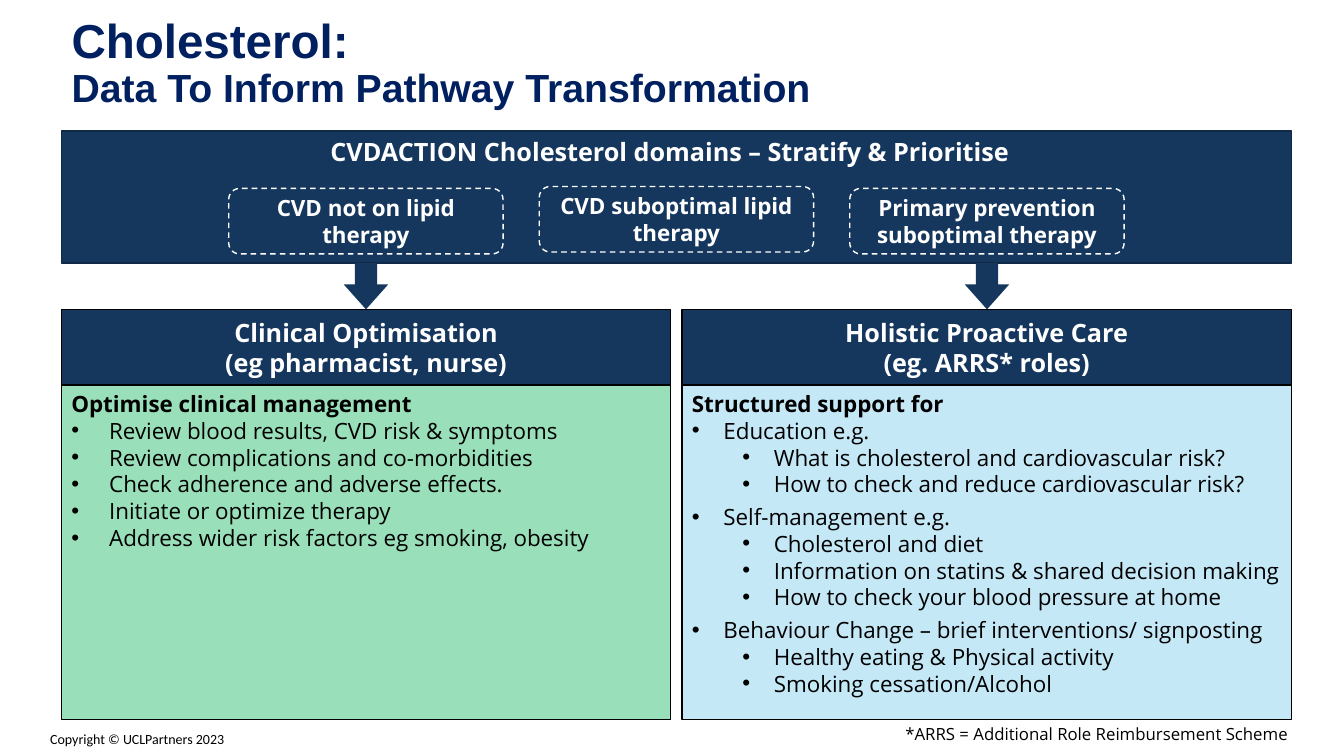
from dataclasses import dataclass

from lxml.etree import SubElement
from pptx import Presentation
from pptx.dml.color import RGBColor
from pptx.enum.dml import MSO_LINE
from pptx.enum.shapes import MSO_SHAPE
from pptx.enum.text import MSO_ANCHOR, PP_ALIGN
from pptx.oxml.ns import qn
from pptx.util import Pt

TITLE = ["Cholesterol:", "Data To Inform Pathway Transformation"]
BANNER = "CVDACTION Cholesterol domains – Stratify & Prioritise"
DOMAINS = [
    ("CVD not on lipid therapy", 134.6),
    ("CVD suboptimal lipid therapy", 133.2),
    ("Primary prevention suboptimal therapy", 134.6),
]
# Bullets are (level, text) pairs.
COLUMNS = [
    {
        "heading": ["Clinical Optimisation", "(eg pharmacist, nurse)"],
        "lead": "Optimise clinical management",
        "fill": "00B050", "opacity": 40, "hanging": 27, "arrow_left": 245.6,
        "bullets": [
            (0, "Review blood results, CVD risk & symptoms"),
            (0, "Review complications and co-morbidities"),
            (0, "Check adherence and adverse effects."),
            (0, "Initiate or optimize therapy"),
            (0, "Address wider risk factors eg smoking, obesity"),
        ],
    },
    {
        "heading": ["Holistic Proactive Care", "(eg. ARRS* roles)"],
        "lead": "Structured support for",
        "fill": "42B6E6", "opacity": 30, "hanging": 22.5, "arrow_left": 689.2,
        "bullets": [
            (0, "Education e.g."),
            (1, "What is cholesterol and cardiovascular risk?"),
            (1, "How to check and reduce cardiovascular risk?"),
            (0, "Self-management e.g."),
            (1, "Cholesterol and diet"),
            (1, "Information on statins & shared decision making"),
            (1, "How to check your blood pressure at home"),
            (0, "Behaviour Change – brief interventions/ signposting"),
            (1, "Healthy eating & Physical activity"),
            (1, "Smoking cessation/Alcohol"),
        ],
    },
]
FOOTNOTE = "*ARRS = Additional Role Reimbursement Scheme"
COPYRIGHT = "Copyright © UCLPartners 2023"


@dataclass(frozen=True)
class Theme:
    navy: str = "15375E"
    banner_line: str = "102946"
    title: str = "002060"
    white: str = "FFFFFF"
    black: str = "000000"
    title_font: str = "Arial"
    body_font: str = "Open Sans"
    copyright_font: str = "Calibri"
    title_sizes: tuple = (34, 28)
    heading_size: int = 18
    body_size: int = 16
    footnote_size: int = 12
    copyright_size: int = 10


THEME = Theme()
LEFT, WIDTH, GAP = 43.9, 878.6, 8
COLUMN_WIDTH = (WIDTH - GAP) / 2
BANNER_TOP, BANNER_HEIGHT = 93.6, 94.4
HEADING_TOP, HEADING_HEIGHT = 221, 54
BODY_HEIGHT = 239
DOMAIN_LEFT, DOMAIN_STEP, DOMAIN_WIDTH, DOMAIN_HEIGHT = 163.4, 221.8, 196, 46.8
ARROW_WIDTH = 31.7


def style(paragraph, size, color, bold=False, font=THEME.body_font, align=PP_ALIGN.LEFT):
    paragraph.alignment = align
    paragraph.font.size = Pt(size)
    paragraph.font.name = font
    paragraph.font.bold = bold
    paragraph.font.color.rgb = RGBColor.from_string(color)


def add_lines(frame, lines, **look):
    frame.word_wrap = True
    for index, line in enumerate(lines):
        paragraph = frame.paragraphs[0] if index == 0 else frame.add_paragraph()
        paragraph.text = line
        style(paragraph, **look)


def add_box(slide, kind, left, top, width, height, fill=None, line=None, anchor=MSO_ANCHOR.MIDDLE):
    shape = slide.shapes.add_shape(kind, Pt(left), Pt(top), Pt(width), Pt(height))
    shape.shadow.inherit = False
    if fill:
        shape.fill.solid()
        shape.fill.fore_color.rgb = RGBColor.from_string(fill)
    else:
        shape.fill.background()
    if line:
        shape.line.color.rgb = RGBColor.from_string(line)
        shape.line.width = Pt(1)
    else:
        shape.line.fill.background()
    shape.text_frame.vertical_anchor = anchor
    return shape


def set_opacity(shape, percent):
    color = shape.fill._xPr.find(qn("a:solidFill"))[0]
    SubElement(color, qn("a:alpha"), val=str(percent * 1000))


def add_bullet(frame, text, level, hanging):
    paragraph = frame.add_paragraph()
    paragraph.text = text
    paragraph.level = level
    properties = paragraph._p.get_or_add_pPr()
    properties.set("marL", str(Pt(hanging + 36 * level)))
    properties.set("indent", str(-Pt(hanging)))
    SubElement(properties, qn("a:buFont"), typeface="Arial")
    SubElement(properties, qn("a:buChar"), char="•")
    style(paragraph, THEME.body_size, THEME.black)
    return paragraph


def add_title(slide):
    title = slide.shapes.title
    title.left, title.top, title.width, title.height = Pt(43.9), Pt(8.6), Pt(708.5), Pt(84.2)
    frame = title.text_frame
    add_lines(frame, TITLE, size=THEME.title_sizes[0], color=THEME.title, bold=True, font=THEME.title_font)
    frame.vertical_anchor = MSO_ANCHOR.TOP
    for paragraph, size in zip(frame.paragraphs, THEME.title_sizes):
        paragraph.font.size = Pt(size)
        paragraph.line_spacing = 0.9


def add_banner(slide):
    heading = dict(size=THEME.heading_size, color=THEME.white, bold=True, align=PP_ALIGN.CENTER)
    banner = add_box(slide, MSO_SHAPE.RECTANGLE, LEFT, BANNER_TOP, WIDTH, BANNER_HEIGHT,
                     THEME.navy, THEME.banner_line, MSO_ANCHOR.TOP)
    banner.text_frame.margin_right = Pt(16.5)
    add_lines(banner.text_frame, [BANNER], **heading)
    for index, (domain, top) in enumerate(DOMAINS):
        pill = add_box(slide, MSO_SHAPE.ROUNDED_RECTANGLE, DOMAIN_LEFT + index * DOMAIN_STEP, top,
                       DOMAIN_WIDTH, DOMAIN_HEIGHT, line=THEME.white)
        pill.line.dash_style = MSO_LINE.DASH
        add_lines(pill.text_frame, [domain], **{**heading, "size": THEME.body_size})


def add_column(slide, column, left):
    arrow_top = BANNER_TOP + BANNER_HEIGHT
    arrow = add_box(slide, MSO_SHAPE.DOWN_ARROW, column["arrow_left"], arrow_top,
                    ARROW_WIDTH, HEADING_TOP - arrow_top, THEME.navy)
    arrow.adjustments[1] = 0.56
    heading = add_box(slide, MSO_SHAPE.RECTANGLE, left, HEADING_TOP, COLUMN_WIDTH, HEADING_HEIGHT,
                      THEME.navy, THEME.black)
    add_lines(heading.text_frame, column["heading"], size=THEME.heading_size, color=THEME.white,
              bold=True, align=PP_ALIGN.CENTER)
    body = add_box(slide, MSO_SHAPE.RECTANGLE, left, HEADING_TOP + HEADING_HEIGHT, COLUMN_WIDTH,
                   BODY_HEIGHT, column["fill"], THEME.black, MSO_ANCHOR.TOP)
    set_opacity(body, column["opacity"])
    add_lines(body.text_frame, [column["lead"]], size=THEME.body_size, color=THEME.black, bold=True)
    previous_level = 0
    for level, text in column["bullets"]:
        paragraph = add_bullet(body.text_frame, text, level, column["hanging"])
        if level < previous_level:
            paragraph.space_before = Pt(4)
        previous_level = level


def add_note(slide, text, left, top, width, height, **look):
    box = slide.shapes.add_textbox(Pt(left), Pt(top), Pt(width), Pt(height))
    add_lines(box.text_frame, [text], color=THEME.black, **look)


def main():
    presentation = Presentation()
    presentation.slide_width, presentation.slide_height = Pt(960), Pt(540)
    slide = presentation.slides.add_slide(presentation.slide_layouts[5])
    add_title(slide)
    add_banner(slide)
    for index, column in enumerate(COLUMNS):
        add_column(slide, column, LEFT + index * (COLUMN_WIDTH + GAP))
    add_note(slide, FOOTNOTE, 639.4, 513.4, 288, 21.6, size=THEME.footnote_size, align=PP_ALIGN.RIGHT)
    add_note(slide, COPYRIGHT, 28.8, 518.4, 141, 19.4, size=THEME.copyright_size, font=THEME.copyright_font)
    presentation.save("out.pptx")


if __name__ == "__main__":
    main()
